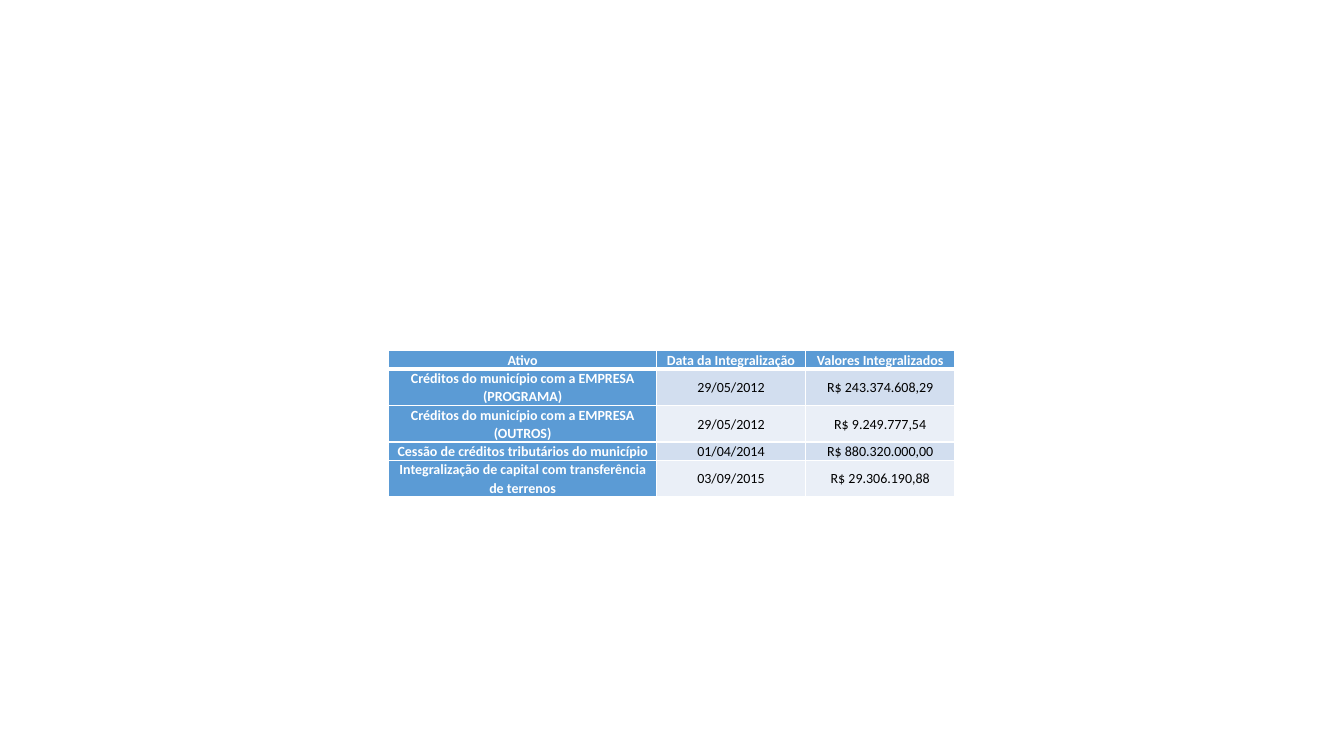
import dataclasses

import lxml.etree
import pptx
import pptx.dml.color
import pptx.enum.text
import pptx.oxml.ns
import pptx.util

Cm = pptx.util.Cm
Pt = pptx.util.Pt


@dataclasses.dataclass(frozen=True)
class Theme:
    font: str = "Calibri"
    text_size: float = 10
    line_spacing: float = 1.07
    header_fill: str = "5B9BD5"
    header_text: str = "FFFFFF"
    body_text: str = "000000"
    bands: tuple = ("D2DEEF", "EAEFF7")
    border: str = "FFFFFF"
    thin_line: float = 1
    thick_line: float = 3


class SlideBuilder:
    def __init__(self, page, theme):
        self.page = page
        self.theme = theme

    def table(self, left, top, column_widths, row_heights, rows):
        """Add a table whose first row and first column are headings."""
        frame = self.page.shapes.add_table(
            len(rows), len(column_widths), left, top,
            sum(column_widths), sum(row_heights))
        table = frame.table
        table.first_col = True
        for column, width in zip(table.columns, column_widths):
            column.width = width
        for row, height in zip(table.rows, row_heights):
            row.height = height
        for row_index, values in enumerate(rows):
            for column_index, value in enumerate(values):
                self.cell(table.cell(row_index, column_index), value,
                          row_index, column_index)

    def cell(self, cell, value, row_index, column_index):
        theme = self.theme
        heading = row_index == 0 or column_index == 0
        fill = theme.header_fill if heading else theme.bands[(row_index - 1) % 2]
        color = theme.header_text if heading else theme.body_text

        cell.fill.solid()
        cell.fill.fore_color.rgb = pptx.dml.color.RGBColor.from_string(fill)
        cell.vertical_anchor = pptx.enum.text.MSO_ANCHOR.MIDDLE
        cell.margin_left = cell.margin_right = Cm(0.19)
        cell.margin_top = cell.margin_bottom = 0

        para = cell.text_frame.paragraphs[0]
        para.text = value
        para.alignment = pptx.enum.text.PP_ALIGN.CENTER
        para.line_spacing = theme.line_spacing
        for span in para.runs:
            span.font.name = theme.font
            span.font.size = Pt(theme.text_size)
            span.font.bold = heading
            span.font.color.rgb = pptx.dml.color.RGBColor.from_string(color)

        self.borders(cell,
                     top=theme.thick_line if row_index == 1 else theme.thin_line,
                     bottom=theme.thick_line if row_index == 0 else theme.thin_line)

    def borders(self, cell, top, bottom):
        qn = pptx.oxml.ns.qn
        thin = self.theme.thin_line
        properties = cell._tc.get_or_add_tcPr()
        sides = (("a:lnL", thin), ("a:lnR", thin), ("a:lnT", top), ("a:lnB", bottom))
        for position, (tag, width) in enumerate(sides):
            line = lxml.etree.Element(qn(tag), w=str(Pt(width)))
            fill = lxml.etree.SubElement(line, qn("a:solidFill"))
            lxml.etree.SubElement(fill, qn("a:srgbClr"), val=self.theme.border)
            properties.insert(position, line)


def main():
    deck = pptx.Presentation()
    deck.slide_width = Cm(33.87)
    deck.slide_height = Cm(19.05)
    page = deck.slides.add_slide(deck.slide_layouts[6])
    builder = SlideBuilder(page, Theme())

    assets = [
        ("Ativo", "Data da Integralização", "Valores Integralizados"),
        ("Créditos do município com a EMPRESA (PROGRAMA)",
         "29/05/2012", "R$ 243.374.608,29"),
        ("Créditos do município com a EMPRESA (OUTROS)",
         "29/05/2012", "R$ 9.249.777,54"),
        ("Cessão de créditos tributários do município",
         "01/04/2014", "R$ 880.320.000,00"),
        ("Integralização de capital com transferência de terrenos",
         "03/09/2015", "R$ 29.306.190,88"),
    ]
    one_line, two_lines = Cm(0.46), Cm(0.92)
    builder.table(
        Cm(9.8), Cm(8.84),
        column_widths=[Cm(6.74), Cm(3.76), Cm(3.76)],
        row_heights=[one_line, two_lines, two_lines, one_line, two_lines],
        rows=assets)

    deck.save("out.pptx")


if __name__ == "__main__":
    main()
